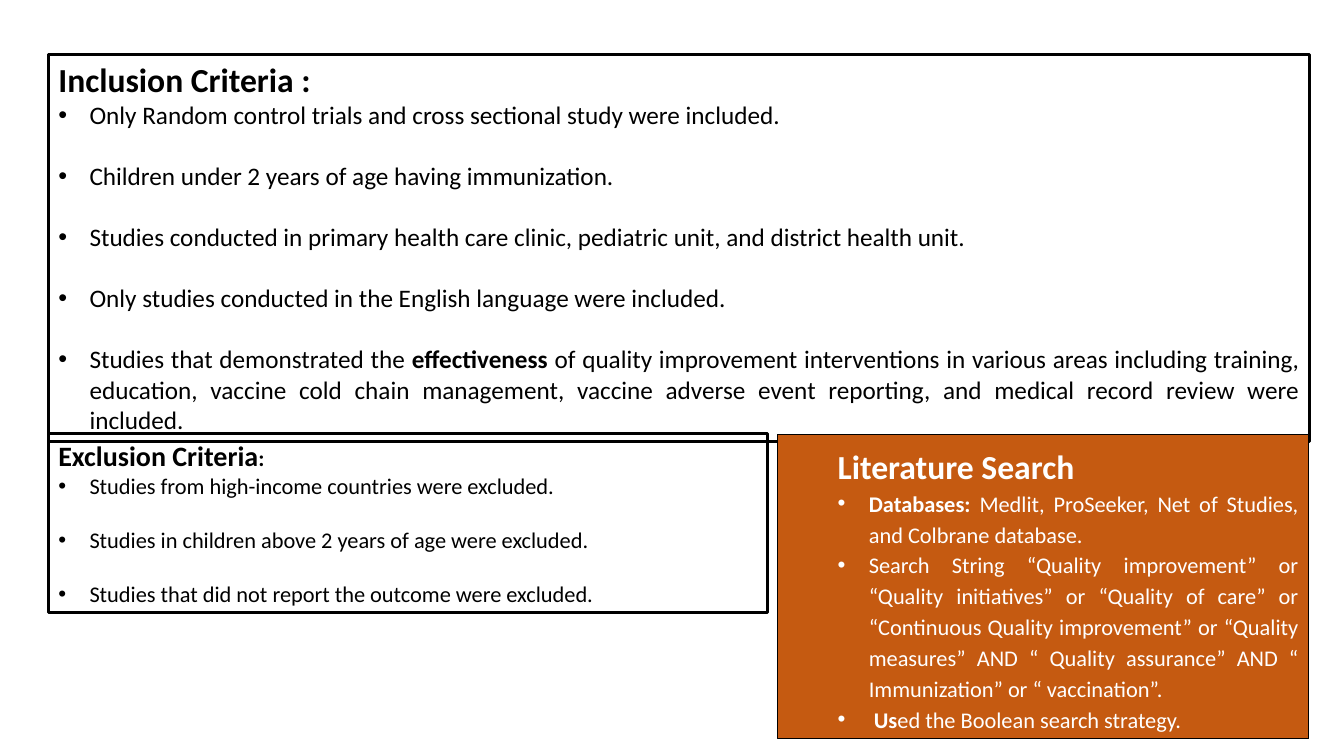
import dataclasses

import pptx
import pptx.dml.color
import pptx.enum.shapes
import pptx.enum.text
import pptx.oxml.ns
import pptx.util
from lxml import etree
from pptx.util import Inches, Pt


@dataclasses.dataclass(frozen=True)
class Theme:
    """Colours, font and type sizes of the slide."""
    font: str = "Calibri"
    ink: str = "000000"
    paper: str = "FFFFFF"
    accent: str = "C55A11"
    title: int = 24
    subtitle: int = 20
    body: int = 18
    small: int = 16
    line_height: float = 1.22


class CriteriaSlide:
    """Draws framed panels with headings and bullets on one slide."""

    def __init__(self, slide, theme):
        self.slide = slide
        self.theme = theme

    def panel(self, left, top, width, height, border, fill=None):
        """Add a framed rectangle and return its text frame."""
        frame = self.slide.shapes.add_shape(
            pptx.enum.shapes.MSO_SHAPE.RECTANGLE,
            Inches(left), Inches(top), Inches(width), Inches(height))
        frame.shadow.inherit = False
        if fill:
            frame.fill.solid()
            frame.fill.fore_color.rgb = pptx.dml.color.RGBColor.from_string(fill)
        else:
            frame.fill.background()
        frame.line.color.rgb = pptx.dml.color.RGBColor.from_string(self.theme.ink)
        frame.line.width = Pt(border)
        frame.text_frame.word_wrap = True
        frame.text_frame.vertical_anchor = pptx.enum.text.MSO_ANCHOR.TOP
        return frame.text_frame

    def run(self, paragraph, text, size, color, bold=False):
        """Add one styled run."""
        run = paragraph.add_run()
        run.text = text
        run.font.name = self.theme.font
        run.font.size = Pt(size)
        run.font.bold = bold
        run.font.color.rgb = pptx.dml.color.RGBColor.from_string(color)

    def indent(self, paragraph, margin, hanging=0.0):
        """Set the left margin and hanging indent in inches."""
        properties = paragraph._p.get_or_add_pPr()
        properties.set("marL", str(Inches(margin)))
        properties.set("indent", str(-Inches(hanging)))
        return properties

    def heading(self, panel, parts, color, margin=0.0, spacing=None):
        """Write the bold first line from (text, size) parts."""
        paragraph = panel.paragraphs[0]
        paragraph.alignment = pptx.enum.text.PP_ALIGN.LEFT
        paragraph.line_spacing = spacing
        self.indent(paragraph, margin)
        for text, size in parts:
            self.run(paragraph, text, size, color, True)

    def bullets(self, panel, items, size, color, margin=0.31, spacing=None, gap=0.0):
        """Write justified bullets from lists of (text, bold) runs."""
        for index, item in enumerate(items):
            paragraph = panel.add_paragraph()
            paragraph.alignment = pptx.enum.text.PP_ALIGN.JUSTIFY
            paragraph.line_spacing = spacing
            paragraph.space_before = Pt(gap if index else 0)
            properties = self.indent(paragraph, margin, 0.31)
            for tag, key, value in (("a:buFont", "typeface", "Arial"),
                                    ("a:buChar", "char", "•")):
                etree.SubElement(properties, pptx.oxml.ns.qn(tag)).set(key, value)
            for text, bold in item:
                self.run(paragraph, text, size, color, bold)


INCLUSION = [
    [("Only Random control trials and cross sectional study were included.", False)],
    [("Children under 2 years of age having immunization.", False)],
    [("Studies conducted in primary health care clinic, pediatric unit, "
      "and district health unit.", False)],
    [("Only studies conducted in the English language were included.", False)],
    [("Studies that demonstrated the", False), (" effectiveness ", True),
     ("of quality improvement interventions in various areas including training, "
      "education, vaccine cold chain management, vaccine adverse event reporting, "
      "and medical record review were included.", False)],
]
SEARCH = [
    [("Databases: ", True),
     ("Medlit, ProSeeker, Net of Studies, and Colbrane database.", False)],
    [("Search String “Quality improvement” or “Quality initiatives” or “Quality of care” "
      "or “Continuous Quality improvement” or “Quality measures” AND “ Quality assurance” "
      "AND “ Immunization” or “ vaccination”.", False)],
    [(" Us", True), ("ed the Boolean search strategy.", False)],
]
EXCLUSION = [
    [("Studies from high-income countries were excluded.", False)],
    [("Studies in children above 2 years of age were excluded.", False)],
    [("Studies that did not report the outcome were excluded.", False)],
]


def main():
    """Build and save the criteria slide."""
    deck = pptx.Presentation()
    deck.slide_width, deck.slide_height = Inches(13.33), Inches(7.5)
    theme = Theme()
    page = CriteriaSlide(deck.slides.add_slide(deck.slide_layouts[6]), theme)

    inclusion = page.panel(0.48, 0.54, 12.51, 3.84, 2.25)
    page.heading(inclusion, [("Inclusion Criteria :", theme.title)], theme.ink)
    page.bullets(inclusion, INCLUSION, theme.body, theme.ink,
                 gap=theme.body * theme.line_height)

    search = page.panel(7.71, 4.31, 5.27, 3.02, 0.75, theme.accent)
    page.heading(search, [("Literature Search", theme.title)], theme.paper, 0.5, 1.15)
    page.bullets(search, SEARCH, theme.small, theme.paper, 0.81, 1.15)

    exclusion = page.panel(0.48, 4.3, 7.13, 1.78, 2.25)
    page.heading(exclusion, [("Exclusion Criteria", theme.subtitle), (":", theme.small)],
                 theme.ink)
    page.bullets(exclusion, EXCLUSION, theme.small, theme.ink,
                 gap=theme.small * theme.line_height)

    deck.save("out.pptx")


if __name__ == "__main__":
    main()
